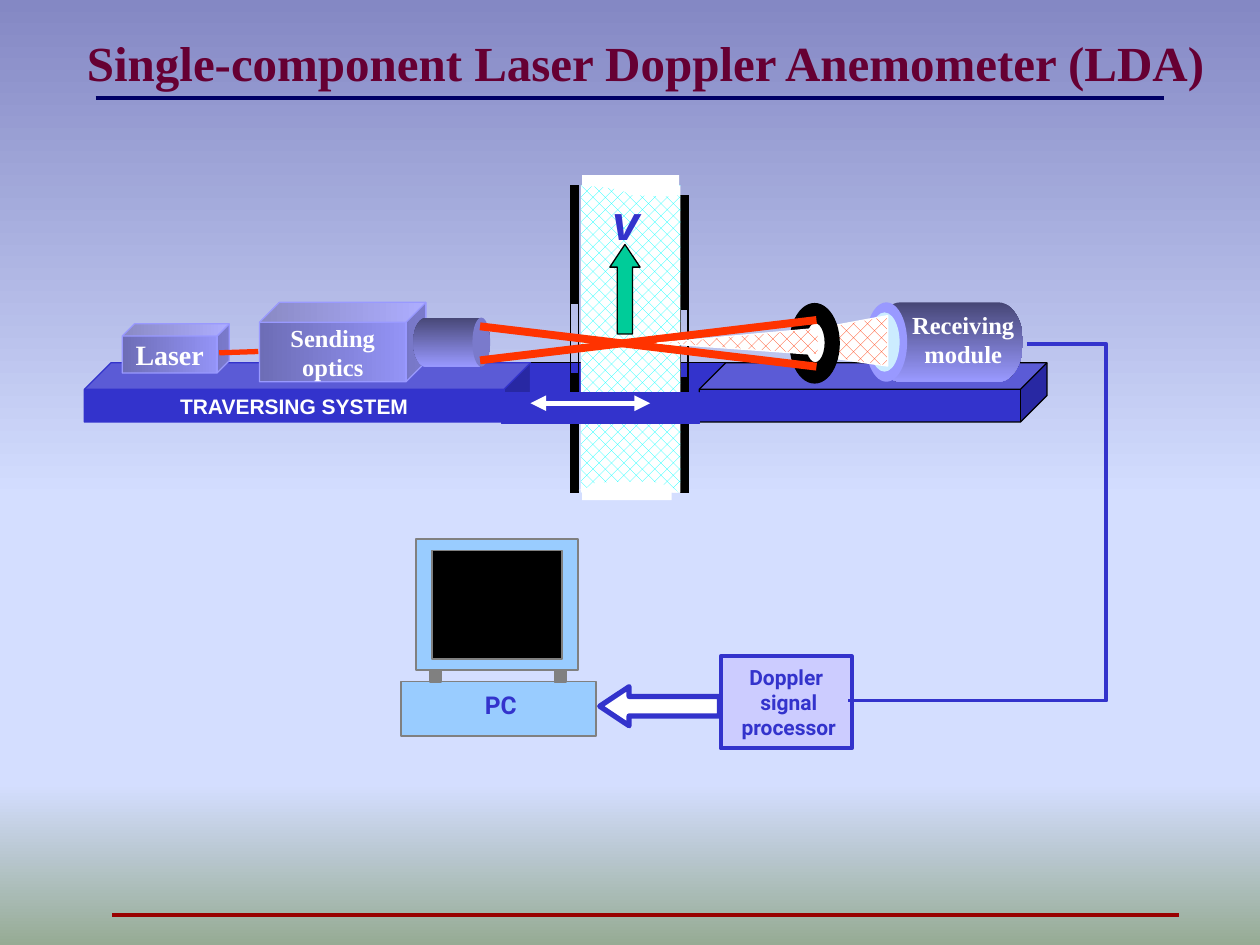
import pptx
import pptx.util
import pptx.oxml.ns
import pptx.dml.color
import pptx.enum.dml
import pptx.enum.shapes
import pptx.enum.text
from lxml import etree

Inches, Pt, qn = pptx.util.Inches, pptx.util.Pt, pptx.oxml.ns.qn
Form = pptx.enum.shapes.MSO_SHAPE
Pat = pptx.enum.dml.MSO_PATTERN
Align = pptx.enum.text.PP_ALIGN
Anchor = pptx.enum.text.MSO_ANCHOR
Auto = pptx.enum.text.MSO_AUTO_SIZE

BLUE, LILAC, RED, WHITE, BLACK = "3333CC", "9999FF", "FF3300", "FFFFFF", "000000"
SKY, GREY, SERIF = "99CCFF", "808080", "Times New Roman"

TITLE = "Single-component Laser Doppler Anemometer (LDA)"
BACK = {"stops": [(0, "8488C4"), (53, "D4DEFF"), (83, "D4DEFF"), (100, "96AB94")], "angle": 270}
CASE = {"stops": [(0, "6D6DB6"), (100, LILAC)], "angle": 0}
TUBE = {"stops": [(0, "474776"), (100, LILAC)], "angle": 270}
GLOW = (Pat.PERCENT_25, RED, WHITE)
FLOW = (Pat.PERCENT_30, "00FFFF", WHITE)

RULES = [((0.76, 0.78), (9.24, 0.78), "000066", 2.25),
         ((0.89, 7.26), (9.36, 7.26), "990000", 2.25)]

BENCH = [
    (Form.RECTANGLE, (4.21, 2.88, 1.57, 0.24), BLUE, (BLACK, 0.75)),
    (Form.CUBE, (0.67, 2.88, 3.54, 0.47), BLUE, (BLUE, 0.75), [0.448],
     (["TRAVERSING SYSTEM"], 12, "Arial", WHITE)),
    (Form.CUBE, (5.55, 2.88, 2.76, 0.47), BLUE, (BLACK, 0.75), [0.448]),
    (Form.FLOWCHART_DIRECT_ACCESS_STORAGE, (6.95, 2.4, 1.17, 0.63), TUBE),
    (Form.OVAL, (6.87, 2.4, 0.33, 0.63), LILAC),
    (Form.OVAL, (6.9, 2.48, 0.24, 0.47), "CCECFF"),
    (Form.ISOSCELES_TRIANGLE, (6.24, 2.1, 0.4, 1.21), GLOW, (WHITE, 0.75), [0.441], None, 270),
    (Form.OVAL, (6.27, 2.41, 0.39, 0.63), BLACK, (BLACK, 0.75)),
    (Form.OVAL, (6.39, 2.56, 0.16, 0.32), WHITE, (BLACK, 0.75)),
    (Form.CUBE, (2.06, 2.4, 1.32, 0.63), CASE, (LILAC, 0.75), [0.25],
     (["Sending", "optics"], 14, SERIF, WHITE)),
    (Form.CUBE, (0.97, 2.57, 0.85, 0.39), CASE, (LILAC, 0.75), [0.25],
     (["Laser"], 16, SERIF, WHITE)),
]
SIGNAL = [
    (Form.RECTANGLE, (5.72, 5.21, 1.04, 0.73), "CCCCFF", (BLUE, 2.25), [],
     (["Doppler", " signal", " processor"], 12, "Roboto", BLUE)),
    (Form.RECTANGLE, (3.18, 5.41, 1.55, 0.43), SKY, (GREY, 1)),
    (Form.RECTANGLE, (3.3, 4.28, 1.29, 1.04), SKY, (GREY, 1)),
    (Form.RECTANGLE, (3.43, 4.37, 1.03, 0.86), BLACK, (GREY, 1)),
    (Form.RECTANGLE, (3.41, 5.32, 0.09, 0.09), GREY, (GREY, 1)),
    (Form.RECTANGLE, (4.4, 5.32, 0.09, 0.09), GREY, (GREY, 1)),
    (Form.LEFT_ARROW, (4.76, 5.45, 0.95, 0.31), WHITE, (BLUE, 3), [0.5, 0.753]),
]
WALLS = [(5.43, 1.55, 2.46, 2.99), (4.56, 1.47, 2.41, 2.96)]
DUCT = [
    (Form.RECTANGLE, (4.61, 1.47, 0.79, 2.44), FLOW),
    (Form.RECTANGLE, (4.62, 3.89, 0.71, 0.08), WHITE),
    (Form.RECTANGLE, (5, 1.39, 0.39, 0.16), WHITE),
    (Form.RECTANGLE, (4.62, 1.39, 0.46, 0.09), WHITE),
]
EDGES = [
    [(4.59, 3.89), (4.73, 3.89), (5.39, 3.91), (5.32, 3.86), (5.17, 3.82), (4.73, 3.83), (4.66, 3.87)],
    [(4.61, 1.47), (5.39, 1.47), (5.38, 1.53), (5.35, 1.56), (5.04, 1.55), (4.89, 1.5), (4.75, 1.48)],
]
LENS = [
    (Form.FLOWCHART_DIRECT_ACCESS_STORAGE, (3.28, 2.52, 0.61, 0.39), TUBE),
    (Form.OVAL, (3.75, 2.52, 0.14, 0.39), "7A7ACC"),
]
BEAMS = [((3.81, 2.59), (6.48, 2.91), RED, 4.5), ((3.81, 2.86), (6.48, 2.54), RED, 4.5)]
FRONT = [
    (Form.UP_ARROW, (4.84, 1.94, 0.24, 0.71), "00CC99", (BLACK, 0.75), [0.5, 0.75]),
    (Form.ISOSCELES_TRIANGLE, (5.75, 2.07, 0.21, 1.28), GLOW, (WHITE, 0.75), [0.441], None, 270),
    (Form.RECTANGLE, (3.98, 3.12, 1.57, 0.24), BLUE, (BLUE, 0.75)),
]
CABLE = [(8.15, 2.73), (8.78, 2.73), (8.78, 5.56), (6.73, 5.56)]
LABELS = [
    ((3.75, 5.43, 0.45, 0.33), (["PC"], 14, "Roboto", BLUE), Align.CENTER, {}),
    ((7.14, 2.41, 1.01, 0.57), (["Receiving", "module"], 14, SERIF, WHITE), Align.CENTER, {}),
    ((4.76, 1.47, 0.63, 0.57), (["v"], 28, "Arial", BLUE), Align.LEFT, {"italic": True}),
]


def hue(code):
    return pptx.dml.color.RGBColor.from_string(code)


def paint(fill, look, root):
    if look is None:
        fill.background()
    elif isinstance(look, str):
        fill.solid()
        fill.fore_color.rgb = hue(look)
    elif isinstance(look, tuple):
        fill.patterned()
        fill.pattern = look[0]
        fill.fore_color.rgb, fill.back_color.rgb = hue(look[1]), hue(look[2])
    else:
        fill.gradient()
        fill.gradient_angle = look["angle"]
        stops = root.find(".//" + qn("a:gsLst"))
        for old in list(stops):
            stops.remove(old)
        for pos, code in look["stops"]:
            stop = etree.SubElement(stops, qn("a:gs"), pos=str(pos * 1000))
            etree.SubElement(stop, qn("a:srgbClr"), val=code)


def style(shape, look, edge=None):
    shape.shadow.inherit = False
    paint(shape.fill, look, shape.element)
    if edge:
        shape.line.color.rgb, shape.line.width = hue(edge[0]), Pt(edge[1])
    else:
        shape.line.fill.background()


def write(shape, text, align=Align.CENTER, anchor=Anchor.MIDDLE, extra={}):
    lines, size, face, code = text
    frame = shape.text_frame
    form = {"auto_size": Auto.NONE, "word_wrap": False, "vertical_anchor": anchor}
    for name, val in form.items():
        setattr(frame, name, val)
    font = {"size": Pt(size), "name": face, "bold": True, **extra}
    for i, line in enumerate(lines):
        para = frame.add_paragraph() if i else frame.paragraphs[0]
        para.alignment = align
        run = para.add_run()
        run.text = line
        for name, val in font.items():
            setattr(run.font, name, val)
        run.font.color.rgb = hue(code)


def block(form, box, look, edge=None, adjust=(), text=None, turn=0):
    shape = slide.shapes.add_shape(form, *map(Inches, box))
    style(shape, look, edge)
    for i, val in enumerate(adjust):
        shape.adjustments[i] = val
    shape.rotation = turn
    if text:
        write(shape, text)


def link(start, end, code, width, ends=()):
    wire = slide.shapes.add_connector(
        pptx.enum.shapes.MSO_CONNECTOR.STRAIGHT, *map(Inches, start + end))
    wire.line.color.rgb, wire.line.width = hue(code), Pt(width)
    for tag in ends:
        etree.SubElement(wire.element.spPr.find(qn("a:ln")), qn(tag), type="triangle")
    etree.SubElement(wire.element.spPr, qn("a:effectLst"))


def trace(points, look, edge=None, close=True):
    spots = [(Inches(x), Inches(y)) for x, y in points]
    pen = slide.shapes.build_freeform(*spots[0])
    pen.add_line_segments(spots[1:], close=close)
    style(pen.convert_to_shape(), look, edge)


def draw(func, items):
    for item in items:
        func(*item)


deck = pptx.Presentation()
deck.slide_width, deck.slide_height = Inches(10), Inches(7.5)
slide = deck.slides.add_slide(deck.slide_layouts[5])
paint(slide.background.fill, BACK, slide.element)

head = slide.shapes.title
head.left, head.top, head.width, head.height = map(Inches, (0.59, 0.21, 9.12, 0.57))
write(head, ([TITLE], 28, SERIF, "660033"), Align.LEFT)

draw(link, RULES)
draw(block, BENCH)
link((1.74, 2.8), (2.05, 2.79), RED, 3)
draw(block, SIGNAL)
for x, top, low, high in WALLS:
    link((x, top), (x, low), BLACK, 4.5)
    link((x, high), (x, 3.91), BLACK, 4.5)
    for side in (x - 0.03, x + 0.03):
        link((side, top), (side, 3.91), BLACK, 0.75)
draw(block, DUCT)
for edge in EDGES:
    trace(edge, WHITE)
draw(block, LENS)
draw(link, BEAMS)
draw(block, FRONT)
trace(CABLE, None, (BLUE, 2.25), False)
link((4.21, 3.2), (5.16, 3.2), WHITE, 3, ("a:headEnd", "a:tailEnd"))
for box, text, align, extra in LABELS:
    write(slide.shapes.add_textbox(*map(Inches, box)), text, align, Anchor.TOP, extra)

deck.save("out.pptx")
